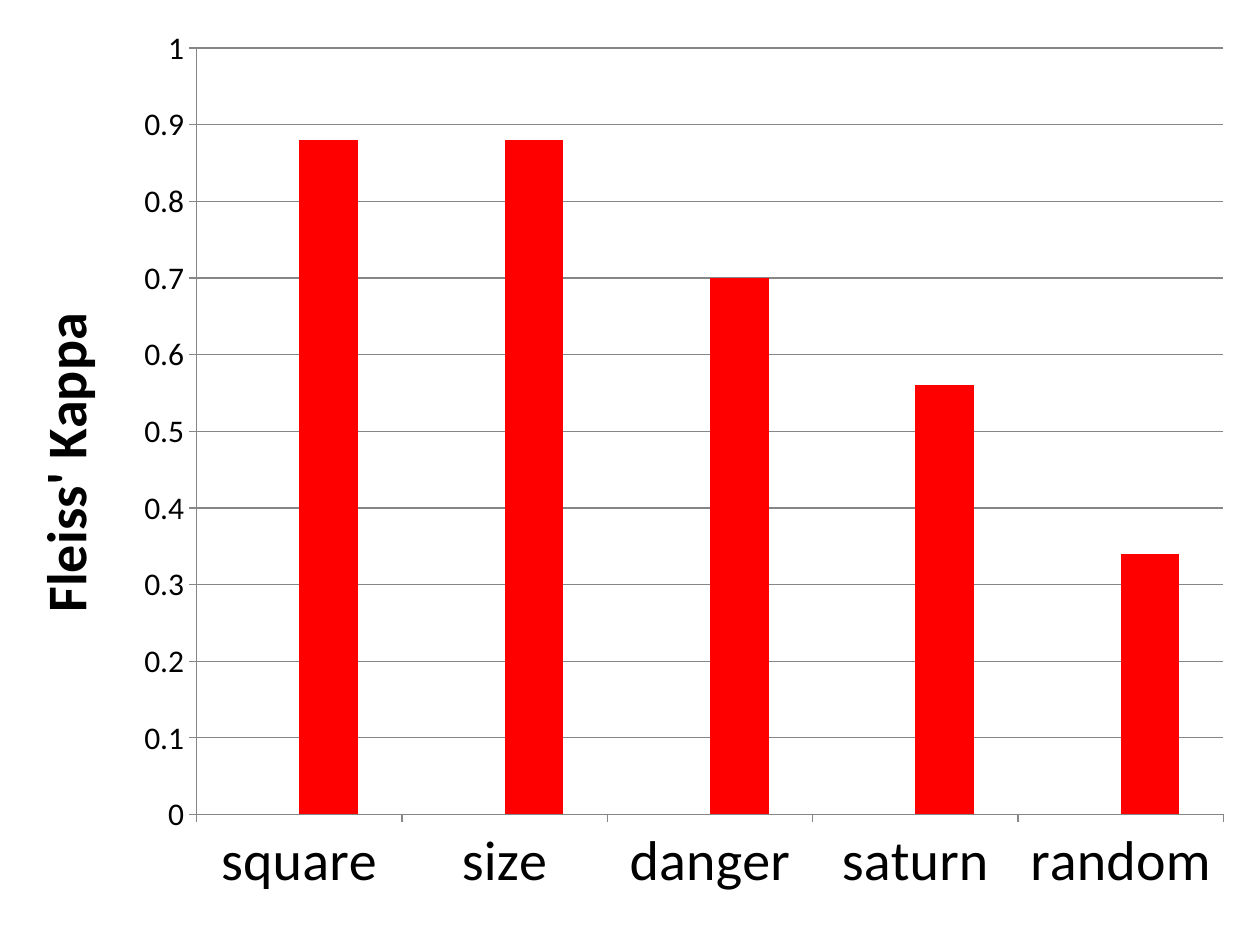
"""Build a slide with a column chart of Fleiss' Kappa for five terms."""
from dataclasses import dataclass

from lxml.etree import SubElement
from pptx import Presentation
from pptx.chart.data import CategoryChartData
from pptx.dml.color import RGBColor
from pptx.enum.chart import XL_CHART_TYPE, XL_TICK_MARK
from pptx.oxml.ns import qn
from pptx.util import Inches, Pt


@dataclass(frozen=True)
class Theme:
    font: str = "Calibri"
    text: RGBColor = RGBColor(0x00, 0x00, 0x00)
    line: RGBColor = RGBColor(0x86, 0x86, 0x86)
    first_series: RGBColor = RGBColor(0x9B, 0xBB, 0x59)
    second_series: RGBColor = RGBColor(0xFF, 0x00, 0x00)
    label_size: Pt = Pt(18)
    large_size: Pt = Pt(32)
    line_width: Pt = Pt(0.75)


theme = Theme()


def write_text(frame, text, *, size, color, bold=False):
    span = frame.paragraphs[0].add_run()
    span.text = text
    span.font.name = theme.font
    span.font.size = size
    span.font.bold = bold
    span.font.color.rgb = color


deck = Presentation()
deck.slide_width = Inches(10)
deck.slide_height = Inches(7.5)
slide = deck.slides.add_slide(deck.slide_layouts[6])

kappa_data = CategoryChartData()
kappa_data.categories = ["square", "size", "danger", "saturn", "random"]
kappa_data.add_series("Series 1", [None] * 5)
kappa_data.add_series("Series 2", [0.88, 0.88, 0.7, 0.56, 0.34])

chart = slide.shapes.add_chart(
    XL_CHART_TYPE.COLUMN_CLUSTERED, Inches(0), Inches(0), Inches(10), Inches(7.5), kappa_data
).chart
chart.has_title = False
chart.has_legend = False
chart.font.name = theme.font
chart.font.size = theme.label_size
chart.font.color.rgb = theme.text

plot = chart.plots[0]
plot.gap_width = 150
plot.overlap = 0
plot.vary_by_categories = False
for series, color in zip(plot.series, (theme.first_series, theme.second_series)):
    series.format.fill.solid()
    series.format.fill.fore_color.rgb = color

term_axis = chart.category_axis
kappa_axis = chart.value_axis
term_axis.tick_labels.font.size = theme.large_size
kappa_axis.minimum_scale = 0
kappa_axis.maximum_scale = 1
kappa_axis.major_unit = 0.1
kappa_axis.has_major_gridlines = True
for axis in (term_axis, kappa_axis):
    axis.major_tick_mark = XL_TICK_MARK.OUTSIDE
    axis.minor_tick_mark = XL_TICK_MARK.NONE
for part in (term_axis, kappa_axis, kappa_axis.major_gridlines):
    part.format.line.color.rgb = theme.line
    part.format.line.width = theme.line_width

write_text(
    kappa_axis.axis_title.text_frame,
    "Fleiss' Kappa",
    size=theme.large_size,
    color=theme.text,
    bold=True,
)

plot_area = chart.element.find(".//" + qn("c:plotArea"))
for layout in plot_area.findall(qn("c:layout")):
    plot_area.remove(layout)
layout = SubElement(plot_area, qn("c:layout"))
plot_area.insert(0, layout)
manual_layout = SubElement(layout, qn("c:manualLayout"))
for tag, value in (
    ("layoutTarget", "inner"),
    ("xMode", "edge"),
    ("yMode", "edge"),
    ("x", "0.156"),
    ("y", "0.051"),
    ("w", "0.815"),
    ("h", "0.811"),
):
    SubElement(manual_layout, qn("c:" + tag)).set("val", value)

deck.save("out.pptx")
